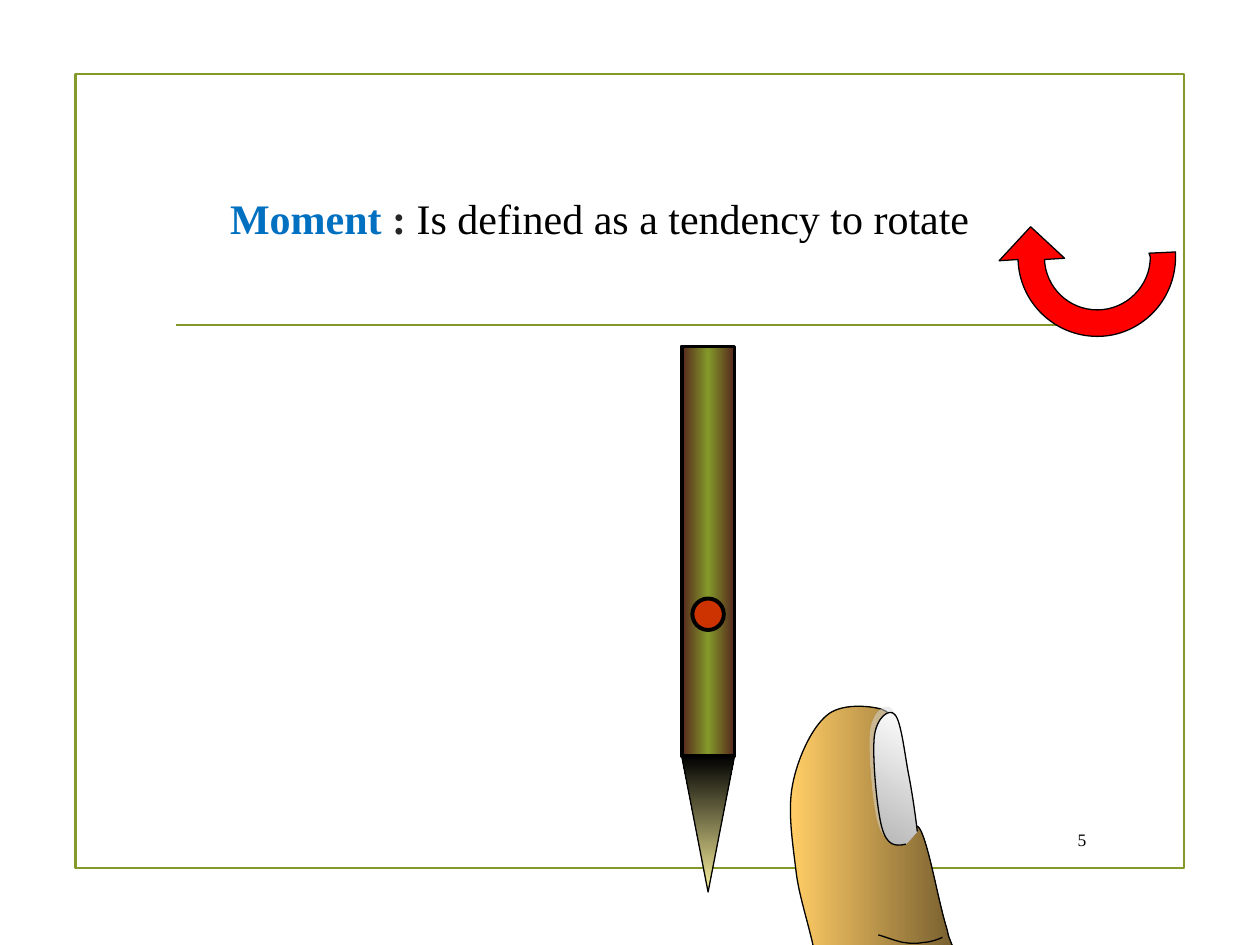
from lxml import etree
from pptx import Presentation
from pptx.dml.color import RGBColor
from pptx.enum.shapes import MSO_CONNECTOR, MSO_SHAPE
from pptx.enum.text import MSO_ANCHOR, PP_ALIGN
from pptx.oxml import parse_xml
from pptx.oxml.ns import nsdecls, qn
from pptx.util import Inches, Pt

RECT, TRIANGLE, OVAL = MSO_SHAPE.RECTANGLE, MSO_SHAPE.ISOSCELES_TRIANGLE, MSO_SHAPE.OVAL
CENTER, RIGHT = PP_ALIGN.CENTER, PP_ALIGN.RIGHT
MIDDLE, BOTTOM = MSO_ANCHOR.MIDDLE, MSO_ANCHOR.BOTTOM

OLIVE = RGBColor(0x83, 0x99, 0x2A)
BROWN = RGBColor(0x55, 0x26, 0x1C)
BLACK = RGBColor(0, 0, 0)
CREAM = RGBColor(0xFB, 0xF2, 0x9D)
RED = RGBColor(0xFF, 0, 0)
PIVOT_RED = RGBColor(0xCC, 0x33, 0)
SKIN = RGBColor(0xFF, 0xCC, 0x66)
SKIN_SHADE = RGBColor(0x76, 0x5E, 0x2F)
NAIL_GREY = RGBColor(0xB6, 0xB6, 0xB6)
WHITE = RGBColor(0xFF, 0xFF, 0xFF)
HALO = RGBColor(0xDA, 0xDA, 0xDA)
BLUE = RGBColor(0, 0x70, 0xC0)
DARK = RGBColor(0x26, 0x26, 0x26)

FONT = "Times New Roman"
DEFINITION = [
    ("Moment", {"size": Pt(24), "bold": True}, BLUE),
    (" : ", {"size": Pt(24), "bold": True}, DARK),
    ("Is defined as a tendency to rotate", {"size": Pt(24), "bold": False}, BLACK),
]
PAGE_NUMBER = [("5", {"size": Pt(10)}, BLACK)]

# Outlines: a start point, then lines (x, y) or curves (two controls, end)
ROTATION_ARROW = [
    (8.29, 2.06), (8.3, 2.28, 8.48, 2.46, 8.71, 2.46), (8.94, 2.46, 9.13, 2.27, 9.13, 2.04),
    (9.13, 2.03, 9.12, 2.02, 9.12, 2.01), (9.33, 2), (9.33, 2.01, 9.33, 2.03, 9.33, 2.04),
    (9.33, 2.39, 9.05, 2.67, 8.71, 2.67), (8.37, 2.67, 8.09, 2.4, 8.08, 2.06),
    (7.93, 2.07), (8.18, 1.8), (8.45, 2.05),
]
FINGER = [
    (7.56, 8.5), (7.56, 8.42, 7.59, 8.17, 7.59, 8.02), (7.59, 7.87, 7.59, 7.7, 7.58, 7.59),
    (7.56, 7.48, 7.53, 7.46, 7.52, 7.39), (7.5, 7.32, 7.49, 7.29, 7.46, 7.16),
    (7.43, 7.04, 7.37, 6.74, 7.32, 6.62), (7.28, 6.51, 7.25, 6.59, 7.22, 6.47),
    (7.19, 6.35, 7.2, 6.04, 7.16, 5.9), (7.12, 5.76, 7.1, 5.67, 7, 5.63),
    (6.9, 5.6, 6.67, 5.58, 6.56, 5.68), (6.44, 5.78, 6.33, 6.02, 6.29, 6.23),
    (6.25, 6.44, 6.29, 6.68, 6.32, 6.93), (6.35, 7.17, 6.47, 7.48, 6.48, 7.68),
    (6.47, 7.89, 6.42, 8.02, 6.39, 8.18), (6.36, 8.33, 6.38, 8.43, 6.38, 8.5),
]
NAIL = [
    (7.19, 6.7), (7.1, 6.72, 7.04, 6.71, 7, 6.57), (6.96, 6.43, 6.92, 5.99, 6.94, 5.84),
    (6.96, 5.69, 7.06, 5.62, 7.1, 5.67), (7.15, 5.71, 7.18, 5.98, 7.21, 6.14),
    (7.24, 6.29, 7.27, 6.5, 7.28, 6.6),
]
KNUCKLE_CREASE = [
    (7.48, 7.44), (7.46, 7.45, 7.38, 7.48, 7.33, 7.48), (7.28, 7.49, 7.23, 7.49, 7.17, 7.48),
    (7.11, 7.47, 7.01, 7.43, 6.97, 7.42),
]

# Pencil: body and tip share one axis
PENCIL_LEFT, PENCIL_WIDTH = 5.41, 0.42
BODY_TOP, BODY_HEIGHT, TIP_HEIGHT = 2.75, 3.25, 1.08
PIVOT_SIZE, PIVOT_TOP = 0.25, 4.75

prs = Presentation()
prs.slide_width, prs.slide_height = Inches(10), Inches(7.5)
slide = prs.slides.add_slide(prs.slide_layouts[6])


def gradient(shape, colors, angle):
    """Spread the colours evenly along the angle, clockwise in degrees."""
    stops = "".join(
        f'<a:gs pos="{100000 * i // (len(colors) - 1)}"><a:srgbClr val="{color}"/></a:gs>'
        for i, color in enumerate(colors))
    grad = parse_xml(f'<a:gradFill {nsdecls("a")} rotWithShape="1"><a:gsLst>{stops}</a:gsLst>'
                     f'<a:lin ang="{angle * 60000}" scaled="0"/></a:gradFill>')
    shape.fill.background()
    props = shape._element.spPr
    props.replace(props.find(qn("a:noFill")), grad)


def paint(shape, line_width, fill=None, line=BLACK, angle=0):
    shape.shadow.inherit = False
    if fill is None:
        shape.fill.background()
    elif isinstance(fill, list):
        gradient(shape, fill, angle)
    else:
        shape.fill.solid()
        shape.fill.fore_color.rgb = fill
    shape.line.color.rgb = line
    shape.line.width = Pt(line_width)
    return shape


def add_preset(kind, box, *style, **more):
    return paint(slide.shapes.add_shape(kind, *map(Inches, box)), *style, **more)


def add_outline(outline, fill=None, closed=False, angle=0):
    """Build the outline through its end points, then bend the curved segments."""
    start, *ends = [tuple(map(Inches, segment[-2:])) for segment in outline]
    builder = slide.shapes.build_freeform(*start)
    builder.add_line_segments(ends, close=closed)
    shape = builder.convert_to_shape()
    lines = list(shape._element.spPr.iter(qn("a:lnTo")))
    for line, segment in zip(lines, outline[1:]):
        if len(segment) == 6:
            curve = etree.Element(qn("a:cubicBezTo"))
            for x, y in zip(segment[::2], segment[1::2]):
                etree.SubElement(curve, qn("a:pt"), x=str(Inches(x) - shape.left),
                                 y=str(Inches(y) - shape.top))
            line.getparent().replace(line, curve)
    return paint(shape, 0.75, fill, angle=angle)


def add_text(box, runs, align, frame_format):
    frame = slide.shapes.add_textbox(*map(Inches, box)).text_frame
    for name, value in {"word_wrap": True, **frame_format}.items():
        setattr(frame, name, value)
    paragraph = frame.paragraphs[0]
    paragraph.alignment = align
    for text, font_format, color in runs:
        run = paragraph.add_run()
        run.text = text
        for name, value in {"name": FONT, **font_format}.items():
            setattr(run.font, name, value)
        run.font.color.rgb = color


# Page frame and rule under the definition
add_preset(RECT, (0.6, 0.59, 8.8, 6.3), 1.25, line=OLIVE)
rule = slide.shapes.add_connector(MSO_CONNECTOR.STRAIGHT, *map(Inches, (1.4, 2.58, 8.61, 2.58)))
rule.line.color.rgb, rule.line.width = OLIVE, Pt(1.25)
etree.SubElement(rule._element.spPr, qn("a:effectLst"))

# Definition and rotation arrow
add_text((1.04, 0.69, 7.44, 1.43), DEFINITION, CENTER,
         {"vertical_anchor": BOTTOM, "margin_bottom": Inches(0.19)})
add_outline(ROTATION_ARROW, RED, closed=True)

# Pencil with its pivot
add_preset(RECT, (PENCIL_LEFT, BODY_TOP, PENCIL_WIDTH, BODY_HEIGHT), 2.25, [BROWN, OLIVE, BROWN])
tip = add_preset(TRIANGLE, (PENCIL_LEFT, BODY_TOP + BODY_HEIGHT, PENCIL_WIDTH, TIP_HEIGHT),
                 0.75, [CREAM, BLACK], angle=90)
tip._element.spPr.find(qn("a:xfrm")).set("flipV", "1")
pivot_left = PENCIL_LEFT + (PENCIL_WIDTH - PIVOT_SIZE) / 2
add_preset(OVAL, (pivot_left, PIVOT_TOP, PIVOT_SIZE, PIVOT_SIZE), 2.25, PIVOT_RED)

# Finger, nail with a pale halo, and crease
add_outline(FINGER, [SKIN, SKIN_SHADE])
nail = add_outline(NAIL, [NAIL_GREY, WHITE], angle=300)
nail._element.spPr.find(qn("a:effectLst")).append(parse_xml(
    f'<a:outerShdw {nsdecls("a")} dist="{Pt(3.6)}" dir="{236 * 60000}" rotWithShape="0">'
    f'<a:srgbClr val="{HALO}"><a:alpha val="50000"/></a:srgbClr></a:outerShdw>'))
add_outline(KNUCKLE_CREASE)

# Page number
add_text((8.29, 6.51, 0.43, 0.31), PAGE_NUMBER, RIGHT, {"vertical_anchor": MIDDLE})

prs.save("out.pptx")
